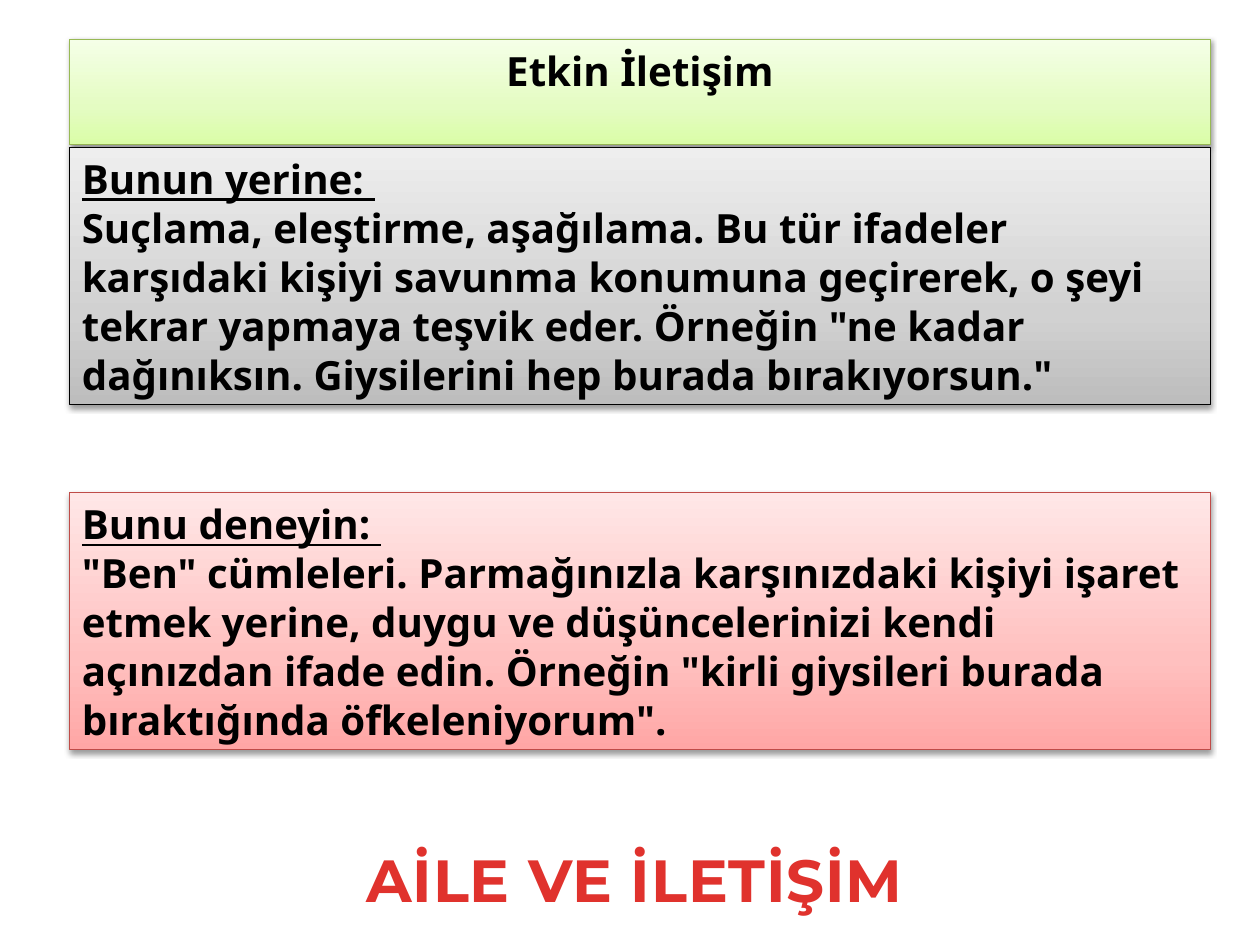
from copy import deepcopy

from lxml.etree import SubElement as Sub
from pptx import Presentation
from pptx.dml.color import RGBColor as RGB
from pptx.enum.shapes import MSO_SHAPE as Shape
from pptx.enum.text import MSO_ANCHOR as Anchor, MSO_AUTO_SIZE as Auto, PP_ALIGN as Align
from pptx.oxml.ns import qn
from pptx.util import Cm, Pt

BLACK = RGB(0x00, 0x00, 0x00)
OLIVE = RGB(0x98, 0xB9, 0x55)
BRICK = RGB(0xBF, 0x4C, 0x48)
GREEN = [(0, RGB(0xDA, 0xFD, 0xA7)), (0.35, RGB(0xE4, 0xFC, 0xC2)), (1, RGB(0xF5, 0xFF, 0xE7))]
GREY = [(0, RGB(0xBD, 0xBD, 0xBD)), (0.35, RGB(0xD1, 0xD1, 0xD1)), (1, RGB(0xEE, 0xEE, 0xEE))]
PINK = [(0, RGB(0xFF, 0xA6, 0xA5)), (0.35, RGB(0xFF, 0xC0, 0xBF)), (1, RGB(0xFF, 0xE7, 0xE7))]
RED = [(0.25, RGB(0xE0, 0x32, 0x2D)), (1, RGB(0xA2, 0x20, 0x1C))]

LEFT, WIDTH = 1.4, 23.01


def blend(fill, root, stops, angle):
    """Give fill, held in the XML element root, a linear gradient."""
    fill.gradient()
    fill.gradient_angle = angle
    marks = root.find(qn("a:gradFill")).find(qn("a:gsLst"))
    while len(marks) < len(stops):
        marks.append(deepcopy(marks[-1]))
    for mark, (pos, color) in zip(fill.gradient_stops, stops):
        mark.position = pos
        mark.color.rgb = color


class Deck:
    face, size, lead = "Noto Sans", Pt(23), Pt(28)

    def __init__(self, slide):
        self.slide = slide

    def panel(self, shape, stops, edge):
        """Fill and outline the shape, and set a soft shadow below it."""
        props = shape._element.spPr
        blend(shape.fill, props, stops, 90)
        shape.line.color.rgb = edge
        shape.line.width = Pt(0.75)
        shape.shadow.inherit = False
        glow = Sub(props.find(qn("a:effectLst")), qn("a:outerShdw"), blurRad="40000",
                   dist="20000", dir="5400000", rotWithShape="0")
        tint = Sub(glow, qn("a:srgbClr"), val="000000")
        Sub(tint, qn("a:alpha"), val="38000")

    def label(self, shape, lines, align):
        frame = shape.text_frame
        frame.text = "\n".join(lines)
        frame.word_wrap = True
        frame.auto_size = Auto.SHAPE_TO_FIT_TEXT
        frame.vertical_anchor = Anchor.TOP
        for para in frame.paragraphs:
            para.alignment = align
            para.line_spacing = self.lead
            font = para.font
            font.name, font.size, font.bold = self.face, self.size, True
            font.color.rgb = BLACK

    def title(self, text, top, high):
        shape = self.slide.shapes.title
        shape.left, shape.top = Cm(LEFT), Cm(top)
        shape.width, shape.height = Cm(WIDTH), Cm(high)
        self.panel(shape, GREEN, OLIVE)
        self.label(shape, [text], Align.CENTER)

    def box(self, head, text, top, stops, edge):
        shape = self.slide.shapes.add_shape(
            Shape.RECTANGLE, Cm(LEFT), Cm(top), Cm(WIDTH), Cm(5.18))
        self.panel(shape, stops, edge)
        self.label(shape, [head, text], Align.LEFT)
        shape.text_frame.paragraphs[0].font.underline = True

    def banner(self, text, left, top, wide, high):
        shape = self.slide.shapes.add_textbox(Cm(left), Cm(top), Cm(wide), Cm(high))
        frame = shape.text_frame
        frame.word_wrap = True
        frame.auto_size = Auto.SHAPE_TO_FIT_TEXT
        para = frame.paragraphs[0]
        para.alignment = Align.CENTER
        run = para.add_run()
        run.text = text
        font = run.font
        font.name, font.size, font.bold = "Montserrat", Pt(34), True
        props = run._r.get_or_add_rPr()
        props.set("spc", "50")
        blend(font.fill, props, RED, 270)


def main():
    prs = Presentation()
    prs.slide_width, prs.slide_height = Cm(25.4), Cm(19.05)
    deck = Deck(prs.slides.add_slide(prs.slide_layouts[5]))
    deck.title("Etkin İletişim", 0.79, 1.24)
    deck.box("Bunun yerine: ",
             "Suçlama, eleştirme, aşağılama. Bu tür ifadeler karşıdaki kişiyi savunma "
             "konumuna geçirerek, o şeyi tekrar yapmaya teşvik eder. Örneğin \"ne kadar "
             "dağınıksın. Giysilerini hep burada bırakıyorsun.\"",
             2.97, GREY, BLACK)
    deck.box("Bunu deneyin: ",
             "\"Ben\" cümleleri. Parmağınızla karşınızdaki kişiyi işaret etmek yerine, "
             "duygu ve düşüncelerinizi kendi açınızdan ifade edin. Örneğin \"kirli "
             "giysileri burada bıraktığında öfkeleniyorum\".",
             9.93, PINK, BRICK)
    deck.banner("AİLE VE İLETİŞİM", 6.55, 16.87, 12.5, 1.7)
    prs.save("out.pptx")


if __name__ == "__main__":
    main()
